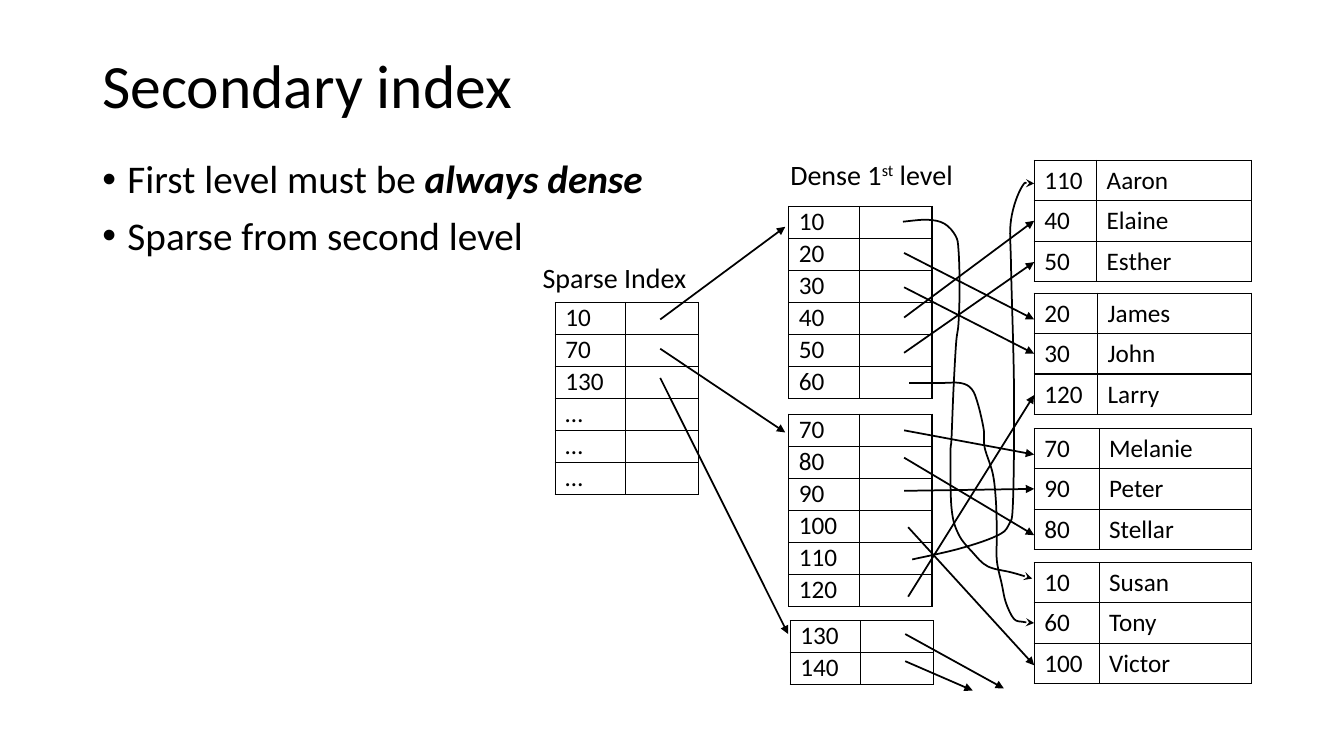
from pptx import Presentation
from pptx.dml.color import RGBColor
from pptx.enum.shapes import MSO_CONNECTOR
from pptx.enum.text import MSO_ANCHOR
from pptx.oxml import parse_xml
from pptx.oxml.ns import nsdecls, qn
from pptx.oxml.xmlchemy import OxmlElement
from pptx.util import Pt

# Content: a run is (text, style), style being "", "strong" or "super"
COLORS = {"ink": "000000"}
FONT = "Calibri"
TITLE = [[("Secondary index", "")]]
BULLETS = [
    [("First level must be ", ""), ("always dense", "strong")],
    [("Sparse from second level", "")],
]
DENSE_LABEL = [[("Dense 1", ""), ("st", "super"), (" level", "")]]
SPARSE_LABEL = [[("Sparse Index", "")]]
# Index blocks: left, top, keys
INDEX_BLOCKS = [
    (396.6, 216, ["10", "70", "130", "…", "…", "…"]),
    (563.5, 147.5, ["10", "20", "30", "40", "50", "60"]),
    (563.5, 295.8, ["70", "80", "90", "100", "110", "120"]),
    (564.5, 443.3, ["130", "140"]),
]
# Record blocks: top, width of the key column, records
RECORD_BLOCKS = [
    (114.6, 44.6, [("110", "Aaron"), ("40", "Elaine"), ("50", "Esther")]),
    (209.5, 45.3, [("20", "James"), ("30", "John"), ("120", "Larry")]),
    (306, 46.4, [("70", "Melanie"), ("90", "Peter"), ("80", "Stellar")]),
    (401.8, 46.4, [("10", "Susan"), ("60", "Tony"), ("100", "Victor")]),
]

# Layout in points
RECORD_LEFT, RECORD_WIDTH, RECORD_HEIGHT = 738.7, 155.4, 86.4
INDEX_COLUMNS, ROW_HEIGHT = (50.4, 51.8), 22.92
POINTER_X, SPARSE_X = 645.8, 471.6

# Pointers from the dense index to records: start x, start y, end y
RECORD_ARROWS = [
    (POINTER_X, 180.7, 228.2), (POINTER_X, 205.2, 252.7),
    (POINTER_X, 226.8, 157.7), (POINTER_X, 252, 187.2),
    (POINTER_X, 307.4, 324.7), (POINTER_X, 326.9, 382.3),
    (POINTER_X, 350.6, 349.2), (648.7, 376.6, 475.2), (648.7, 426.2, 282.2),
]
# Other pointers: start x, start y, end x, end y
OTHER_ARROWS = [
    (SPARSE_X, 228.2, 560.9, 162), (SPARSE_X, 249.1, 560.9, 308.9),
    (SPARSE_X, 270, 563, 452.9),
    (646.6, 452.9, 717.1, 491.8), (646.6, 472.3, 694.8, 493.2),
]
# Curved pointers as points the curve passes through
CURVES = {
    "10 to Susan": [
        (645, 158.4), (662.4, 157), (674.6, 159.8), (682.6, 168.5),
        (684.7, 178.6), (685.5, 205), (684.7, 231), (683, 245),
        (681.1, 278.6), (679.7, 313.2), (679, 324), (679.7, 362.9),
        (684.7, 381.6), (694.8, 394.6), (705.6, 404.6), (722.9, 409),
        (737.3, 413.3)],
    "110 to Aaron": [
        (651.6, 399.6), (685, 392), (711.4, 383), (720.5, 375),
        (723.6, 357.8), (724.3, 277.2), (722.2, 190.8), (722.2, 157),
        (730.1, 133.2), (738.7, 131)],
    "60 to Tony": [
        (649.4, 273.6), (671, 273.6), (686.2, 273.6), (694.1, 277.9),
        (698.4, 288), (702.7, 306.7), (703.4, 319.7), (709.2, 338.4),
        (711.4, 357.8), (712.1, 380.9), (712.1, 400.3), (715.7, 417.6),
        (718.6, 430.6), (724.3, 442.1), (730.8, 444.2), (738.7, 445)],
}

deck = Presentation()
deck.slide_width, deck.slide_height = Pt(960), Pt(540)
page = deck.slides.add_slide(deck.slide_layouts[6])


def format_span(span, size, style=""):
    span.font.name = FONT
    span.font.size = Pt(size)
    span.font.color.rgb = RGBColor.from_string(COLORS["ink"])
    if style == "strong":
        span.font.bold = span.font.italic = True
    elif style == "super":
        span.font._element.set("baseline", "30000")


def add_text(paragraphs, left, top, width, height, size, wrap=True,
             anchor=MSO_ANCHOR.TOP, line_spacing=None, bullet=False):
    box = page.shapes.add_textbox(Pt(left), Pt(top), Pt(width), Pt(height))
    frame = box.text_frame
    frame.word_wrap = wrap
    frame.vertical_anchor = anchor
    for number, runs in enumerate(paragraphs):
        para = frame.add_paragraph() if number else frame.paragraphs[0]
        para.line_spacing = line_spacing
        for text, style in runs:
            span = para.add_run()
            span.text = text
            format_span(span, size, style)
        if bullet:
            para.space_before = Pt(10)
            properties = para._p.get_or_add_pPr()
            properties.set("marL", str(Pt(18)))
            properties.set("indent", str(-Pt(18)))
            properties.append(parse_xml(
                f'<a:buFont {nsdecls("a")} typeface="Arial"/>'))
            properties.append(parse_xml(
                f'<a:buChar {nsdecls("a")} char="•"/>'))


def add_grid(rows, left, top, columns, height, margin):
    frame = page.shapes.add_table(
        len(rows), len(columns), Pt(left), Pt(top), Pt(sum(columns)), Pt(height))
    table = frame.table
    table.first_row = table.horz_banding = False
    for column, width in zip(table.columns, columns):
        column.width = Pt(width)
    for row, values in zip(table.rows, rows):
        row.height = Pt(ROW_HEIGHT)
        for cell, value in zip(row.cells, values):
            cell.margin_top = cell.margin_bottom = Pt(margin)
            para = cell.text_frame.paragraphs[0]
            if value:
                span = para.add_run()
                span.text = value
                format_span(span, 18)
            else:
                para.font.size = Pt(18)
            cell.fill.background()
            for place, side in enumerate(("lnL", "lnR", "lnT", "lnB")):
                cell._tc.get_or_add_tcPr().insert(place, parse_xml(
                    f'<a:{side} {nsdecls("a")} w="{Pt(1)}"><a:solidFill>'
                    f'<a:srgbClr val="{COLORS["ink"]}"/></a:solidFill></a:{side}>'))
    frame.height = Pt(height)


def style_pointer(shape, head):
    shape.line.width = Pt(1.25)
    shape.line.color.rgb = RGBColor.from_string(COLORS["ink"])
    properties = shape._element.spPr
    tail = OxmlElement("a:tailEnd")
    tail.set("type", head)
    properties.find(qn("a:ln")).append(tail)
    properties.append(OxmlElement("a:effectLst"))


def add_arrow(x1, y1, x2, y2):
    arrow = page.shapes.add_connector(
        MSO_CONNECTOR.STRAIGHT, Pt(x1), Pt(y1), Pt(x2), Pt(y2))
    style_pointer(arrow, "triangle")


def add_curve(points):
    """Draw a smooth curve: two control points, then the next point, per stretch."""
    padded = [points[0], *points, points[-1]]
    outline = []
    for a, b, c, d in zip(padded, padded[1:], padded[2:], padded[3:]):
        outline.append([q + (r - p) / 6 for p, q, r in zip(a, b, c)])
        outline.append([r - (s - q) / 6 for q, r, s in zip(b, c, d)])
        outline.append(c)
    builder = page.shapes.build_freeform(*map(Pt, points[0]))
    builder.add_line_segments([(Pt(x), Pt(y)) for x, y in outline], close=False)
    curve = builder.convert_to_shape()
    # Turn every three straight segments into one cubic segment
    segments = list(curve._element.iter(qn("a:lnTo")))
    for first in range(0, len(segments), 3):
        cubic = OxmlElement("a:cubicBezTo")
        segments[first].addprevious(cubic)
        for segment in segments[first:first + 3]:
            cubic.append(segment[0])
            segment.getparent().remove(segment)
    curve.fill.background()
    style_pointer(curve, "stealth")


# Title, bullets and labels
add_text(TITLE, 66, 24, 828, 78.3, 44, anchor=MSO_ANCHOR.MIDDLE, line_spacing=0.9)
add_text(BULLETS, 66, 110.7, 828, 376, 28, line_spacing=0.9, bullet=True)
add_text(DENSE_LABEL, 557.4, 108.7, 133.2, 31.5, 20, wrap=False)
add_text(SPARSE_LABEL, 380.5, 182.5, 118.1, 31.5, 20, wrap=False)

# Record and index tables
for top, key_width, records in RECORD_BLOCKS:
    add_grid(records, RECORD_LEFT, top, (key_width, RECORD_WIDTH - key_width),
             RECORD_HEIGHT, 3.6)
for left, top, keys in INDEX_BLOCKS:
    add_grid([(key, "") for key in keys], left, top, INDEX_COLUMNS,
             ROW_HEIGHT * len(keys), 0)

# Pointers
for x, y, end_y in RECORD_ARROWS:
    add_arrow(x, y, RECORD_LEFT, end_y)
for ends in OTHER_ARROWS:
    add_arrow(*ends)
for points in CURVES.values():
    add_curve(points)

deck.save("out.pptx")
